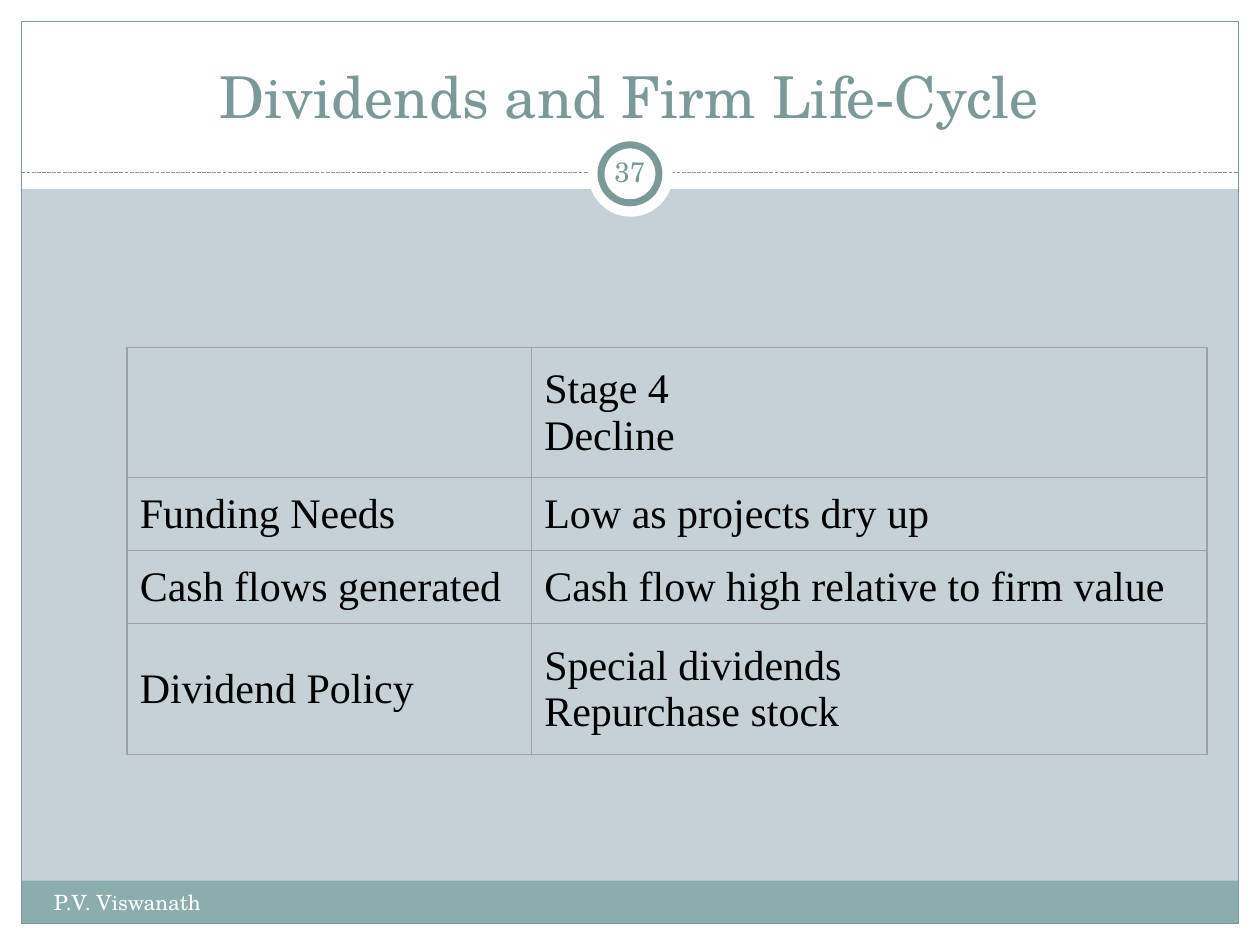
from dataclasses import dataclass
from typing import Optional

import lxml.etree
import pptx
import pptx.dml.color
import pptx.enum.dml
import pptx.enum.shapes
import pptx.enum.text
import pptx.oxml.ns
import pptx.util

Inches = pptx.util.Inches
Shape = pptx.enum.shapes.MSO_SHAPE
Align = pptx.enum.text.PP_ALIGN
Anchor = pptx.enum.text.MSO_ANCHOR


@dataclass(frozen=True)
class Theme:
    background: str = "C5D1D7"
    white: str = "FFFFFF"
    accent: str = "7C999A"
    footer_band: str = "8CADAE"
    border: str = "A0A0A0"
    black: str = "000000"
    heading_font: str = "TeX Gyre Schola"
    table_font: str = "Times New Roman"
    title_size: float = 33
    table_size: float = 24
    number_size: float = 16
    footer_size: float = 12
    outer_border: float = 1
    inner_border: float = 0.5


@dataclass(frozen=True)
class Box:
    left: float
    top: float
    width: float
    height: float

    def lengths(self) -> tuple:
        return tuple(Inches(n) for n in (self.left, self.top, self.width, self.height))


@dataclass(frozen=True)
class Panel:
    box: Box
    fill: Optional[str] = None
    line: Optional[str] = None
    line_width: float = 0.75
    kind: Shape = Shape.RECTANGLE


@dataclass(frozen=True)
class Row:
    label: str
    text: str
    height: float


THEME = Theme()
MARGIN = 0.17
SLIDE_WIDTH, SLIDE_HEIGHT = 10, 7.5
INNER_WIDTH = SLIDE_WIDTH - 2 * MARGIN
RULE_TOP = 1.37

BACKDROP = [
    Panel(Box(0, SLIDE_HEIGHT - MARGIN, SLIDE_WIDTH, MARGIN), THEME.white),
    Panel(Box(0, 0, SLIDE_WIDTH, 1.5), THEME.white),
    Panel(Box(0, 0, MARGIN, SLIDE_HEIGHT), THEME.white),
    Panel(Box(SLIDE_WIDTH - MARGIN, 0, MARGIN, SLIDE_HEIGHT), THEME.white),
    Panel(Box(MARGIN, 6.99, INNER_WIDTH, 0.34), THEME.footer_band),
    Panel(Box(MARGIN, MARGIN, INNER_WIDTH, SLIDE_HEIGHT - 2 * MARGIN), line=THEME.accent),
]
NUMBER_RINGS = [
    Panel(Box(4.67, 1.05, 0.67, 0.67), THEME.white, kind=Shape.OVAL),
    Panel(Box(4.77, 1.15, 0.46, 0.46), THEME.white, THEME.accent, 4, Shape.OVAL),
]
COLUMN_WIDTHS = (3.21, 5.36)
ROWS = [
    Row("", "Stage 4\vDecline", 1.03),
    Row("Funding Needs", "Low as projects dry up", 0.58),
    Row("Cash flows generated", "Cash flow high relative to firm value", 0.58),
    Row("Dividend Policy", "Special dividends\vRepurchase stock", 1.04),
]


def rgb(colour: str) -> pptx.dml.color.RGBColor:
    return pptx.dml.color.RGBColor.from_string(colour)


def draw_panel(slide, panel: Panel) -> None:
    shape = slide.shapes.add_shape(panel.kind, *panel.box.lengths())
    shape.shadow.inherit = False
    if panel.fill:
        shape.fill.solid()
        shape.fill.fore_color.rgb = rgb(panel.fill)
    else:
        shape.fill.background()
    if panel.line:
        shape.line.color.rgb = rgb(panel.line)
        shape.line.width = pptx.util.Pt(panel.line_width)
    else:
        shape.line.fill.background()


def draw_dashed_rule(slide) -> None:
    rule = slide.shapes.add_connector(
        pptx.enum.shapes.MSO_CONNECTOR.STRAIGHT,
        Inches(MARGIN), Inches(RULE_TOP), Inches(SLIDE_WIDTH - MARGIN), Inches(RULE_TOP))
    rule.line.color.rgb = rgb(THEME.accent)
    rule.line.width = pptx.util.Pt(0.75)
    rule.line.dash_style = pptx.enum.dml.MSO_LINE.SQUARE_DOT
    lxml.etree.SubElement(rule._element.spPr, pptx.oxml.ns.qn("a:effectLst"))


def write_text(text_frame, text: str, size: float, colour: str,
               font: str = THEME.heading_font, align: Align = Align.LEFT) -> None:
    text_frame.text = text
    text_frame.word_wrap = True
    for paragraph in text_frame.paragraphs:
        paragraph.alignment = align
        for run in paragraph.runs:
            run.font.size = pptx.util.Pt(size)
            run.font.name = font
            run.font.color.rgb = rgb(colour)


def set_borders(cell, widths: dict) -> None:
    """Put the border lines ahead of the fill in the cell properties."""
    properties = cell._tc.get_or_add_tcPr()
    for index, (side, width) in enumerate(widths.items()):
        line = lxml.etree.Element(pptx.oxml.ns.qn(f"a:ln{side}"), w=str(pptx.util.Pt(width)))
        fill = lxml.etree.SubElement(line, pptx.oxml.ns.qn("a:solidFill"))
        lxml.etree.SubElement(fill, pptx.oxml.ns.qn("a:srgbClr"), val=THEME.border)
        properties.insert(index, line)


def draw_table(slide, left: float, top: float) -> None:
    box = Box(left, top, sum(COLUMN_WIDTHS), sum(row.height for row in ROWS))
    table = slide.shapes.add_table(len(ROWS), len(COLUMN_WIDTHS), *box.lengths()).table
    table.first_row = False
    table.horz_banding = False
    for column, width in zip(table.columns, COLUMN_WIDTHS):
        column.width = Inches(width)
    last_row, last_column = len(ROWS) - 1, len(COLUMN_WIDTHS) - 1
    for row_index, row in enumerate(ROWS):
        table.rows[row_index].height = Inches(row.height)
        for column_index, text in enumerate((row.label, row.text)):
            cell = table.cell(row_index, column_index)
            cell.vertical_anchor = Anchor.MIDDLE
            cell.fill.background()
            write_text(cell.text_frame, text, THEME.table_size, THEME.black, THEME.table_font)
            outer = {"L": column_index == 0, "R": column_index == last_column,
                     "T": row_index == 0, "B": row_index == last_row}
            set_borders(cell, {side: THEME.outer_border if edge else THEME.inner_border
                               for side, edge in outer.items()})


def main() -> None:
    presentation = pptx.Presentation()
    presentation.slide_width = Inches(SLIDE_WIDTH)
    presentation.slide_height = Inches(SLIDE_HEIGHT)
    slide = presentation.slides.add_slide(presentation.slide_layouts.get_by_name("Title Only"))
    slide.background.fill.solid()
    slide.background.fill.fore_color.rgb = rgb(THEME.background)

    # Frame, dashed rule and number rings
    for panel in BACKDROP:
        draw_panel(slide, panel)
    draw_dashed_rule(slide)
    for panel in NUMBER_RINGS:
        draw_panel(slide, panel)

    # Footer and slide number
    footer = slide.shapes.add_textbox(*Box(0.33, 7.01, 3.92, 0.4).lengths())
    write_text(footer.text_frame, "P.V. Viswanath", THEME.footer_size, THEME.white)
    number = slide.shapes.add_textbox(*Box(4.75, 1.12, 0.5, 0.48).lengths())
    frame = number.text_frame
    frame.margin_left = frame.margin_right = Inches(0.05)
    frame.margin_top = frame.margin_bottom = Inches(0.05)
    frame.vertical_anchor = Anchor.MIDDLE
    write_text(frame, "37", THEME.number_size, THEME.accent, align=Align.CENTER)

    # Title, brought in front of the white header
    title = slide.shapes.title
    title.left, title.top, title.width, title.height = Box(0.33, 0.25, 9.33, 0.83).lengths()
    title.text_frame.auto_size = pptx.enum.text.MSO_AUTO_SIZE.NONE
    title.text_frame.vertical_anchor = Anchor.BOTTOM
    write_text(title.text_frame, "Dividends and Firm Life-Cycle", THEME.title_size,
               THEME.accent, align=Align.CENTER)
    slide.shapes._spTree.append(title._element)

    # Life-cycle table
    draw_table(slide, 1.01, 2.76)
    presentation.save("out.pptx")


if __name__ == "__main__":
    main()
